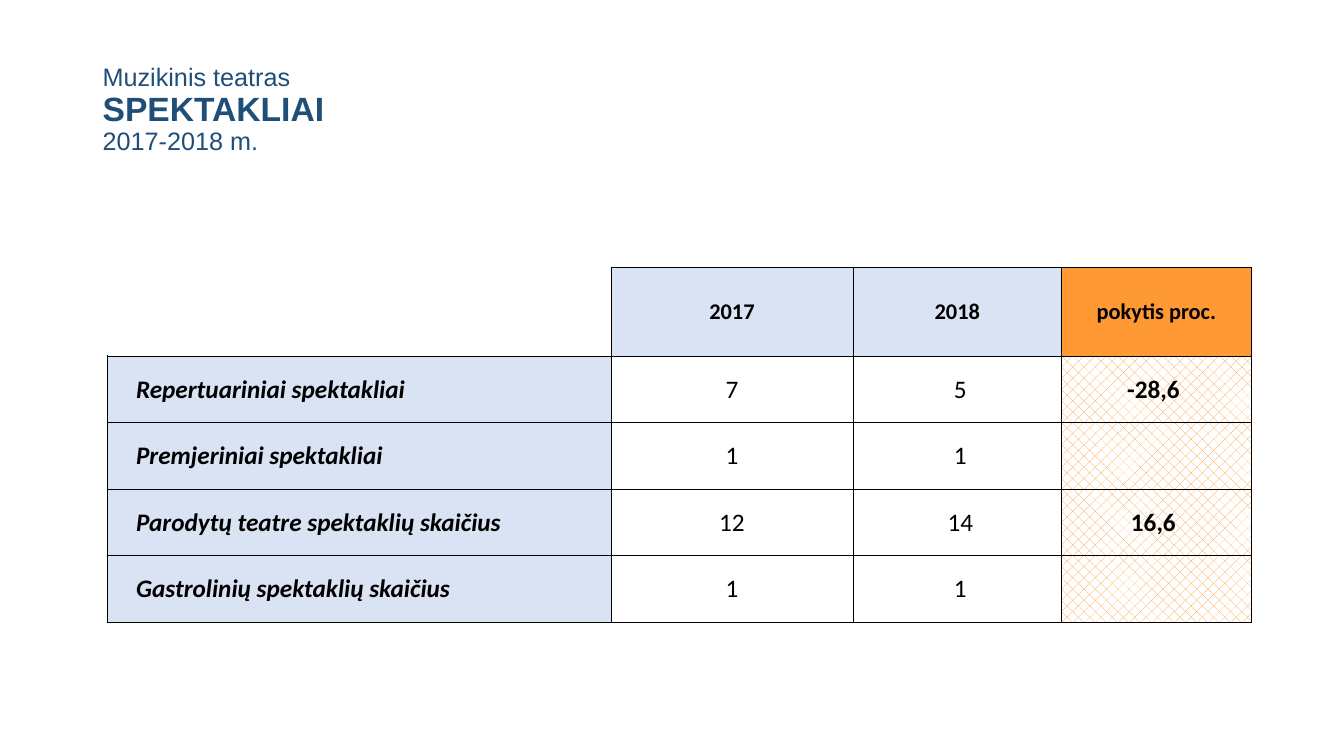
from dataclasses import dataclass

from lxml.etree import SubElement
from pptx import Presentation
from pptx.dml.color import RGBColor as Rgb
from pptx.enum.dml import MSO_PATTERN as Pat
from pptx.enum.text import MSO_ANCHOR as Anchor, PP_ALIGN as Align
from pptx.oxml.ns import qn
from pptx.util import Inches, Pt


@dataclass(frozen=True)
class Theme:
    navy: str = "1F4E79"
    black: str = "000000"
    white: str = "FFFFFF"
    pale: str = "DAE3F3"
    orange: str = "FF9933"
    head: str = "Arial"
    body: str = "Calibri"
    big: int = 24
    mid: int = 18
    small: int = 16
    rule: float = 0.5


class Deck:
    def __init__(self, theme):
        self.theme = theme
        self.file = Presentation()
        self.file.slide_width = Inches(13.33)
        self.file.slide_height = Inches(7.5)
        self.slide = self.file.slides.add_slide(self.file.slide_layouts[6])

    def run(self, para, text, font, size, color, bold=False, italic=False):
        run = para.add_run()
        run.text = text
        style = run.font
        style.name, style.size = font, Pt(size)
        style.bold, style.italic = bold, italic
        style.color.rgb = Rgb.from_string(color)

    def title(self, lines, left, top, width, height):
        """Set (text, size, bold) lines as one paragraph with line breaks."""
        box = self.slide.shapes.add_textbox(*map(Inches, (left, top, width, height)))
        frame = box.text_frame
        frame.word_wrap = True
        frame.vertical_anchor = Anchor.MIDDLE
        para = frame.paragraphs[0]
        para.line_spacing = 0.9
        for i, (text, size, bold) in enumerate(lines):
            if i:
                para.add_line_break()
            self.run(para, text, self.theme.head, size, self.theme.navy, bold)

    def grid(self, left, top, cols, rows):
        frame = self.slide.shapes.add_table(
            len(rows), len(cols),
            *map(Inches, (left, top, sum(cols), sum(rows))))
        table = frame.table
        table.first_row = table.horz_banding = False
        for col, width in zip(table.columns, cols):
            col.width = Inches(width)
        for row, height in zip(table.rows, rows):
            row.height = Inches(height)
        return table

    def edge(self, cell, sides):
        """Rule the given sides of the cell and clear the others."""
        props = cell._tc.get_or_add_tcPr()
        for side in "LRTB":
            line = SubElement(props, qn(f"a:ln{side}"), w=str(Pt(self.theme.rule)))
            if side in sides:
                fill = SubElement(line, qn("a:solidFill"))
                SubElement(fill, qn("a:srgbClr"), val=self.theme.black)
            else:
                SubElement(line, qn("a:noFill"))

    def paint(self, cell, color=None, hatch=False):
        if color is None:
            cell.fill.background()
        elif hatch:
            cell.fill.patterned()
            cell.fill.pattern = Pat.PERCENT_25
            cell.fill.fore_color.rgb = Rgb.from_string(color)
            cell.fill.back_color.rgb = Rgb.from_string(self.theme.white)
        else:
            cell.fill.solid()
            cell.fill.fore_color.rgb = Rgb.from_string(color)

    def label(self, cell, text, size, align=Align.CENTER, lead=0.01, tail=0.01,
              bold=False, italic=False):
        cell.vertical_anchor = Anchor.MIDDLE
        cell.margin_left, cell.margin_right = Inches(lead), Inches(tail)
        cell.margin_top, cell.margin_bottom = Inches(0.01), 0
        para = cell.text_frame.paragraphs[0]
        para.alignment = align
        if text:
            self.run(para, text, self.theme.body, size, self.theme.black, bold, italic)


TITLE = "Muzikinis teatras", "SPEKTAKLIAI", "2017-2018 m."
HEADS = "", "2017", "2018", "pokytis proc."
SHOWS = [
    ("Repertuariniai spektakliai", "7", "5", "-28,6"),
    ("Premjeriniai spektakliai", "1", "1", ""),
    ("Parodytų teatre spektaklių skaičius", "12", "14", "16,6"),
    ("Gastrolinių spektaklių skaičius", "1", "1", ""),
]


def main():
    look = Theme()
    deck = Deck(look)
    sizes = look.mid, look.big, look.mid
    deck.title(zip(TITLE, sizes, (False, True, False)), 0.92, 0.43, 11.5, 1.33)

    table = deck.grid(1.06, 2.65, (5, 2.4, 2.07, 1.88),
                      (0.88,) + (0.66,) * len(SHOWS))
    for col, text in enumerate(HEADS):
        cell = table.cell(0, col)
        deck.edge(cell, "LRTB" if text else "RB")
        deck.paint(cell, (None, look.pale, look.pale, look.orange)[col])
        deck.label(cell, text, look.small, bold=True)

    fills = look.pale, None, None, look.orange
    styles = (
        dict(align=Align.LEFT, lead=0.29, bold=True, italic=True),
        dict(),
        dict(lead=0.07),
        dict(tail=0.07, bold=True),
    )
    for row, show in enumerate(SHOWS, 1):
        for col, text in enumerate(show):
            cell = table.cell(row, col)
            deck.edge(cell, "LRTB")
            deck.paint(cell, fills[col], hatch=col == 3)
            deck.label(cell, text, look.mid, **styles[col])
    deck.file.save("out.pptx")


if __name__ == "__main__":
    main()
